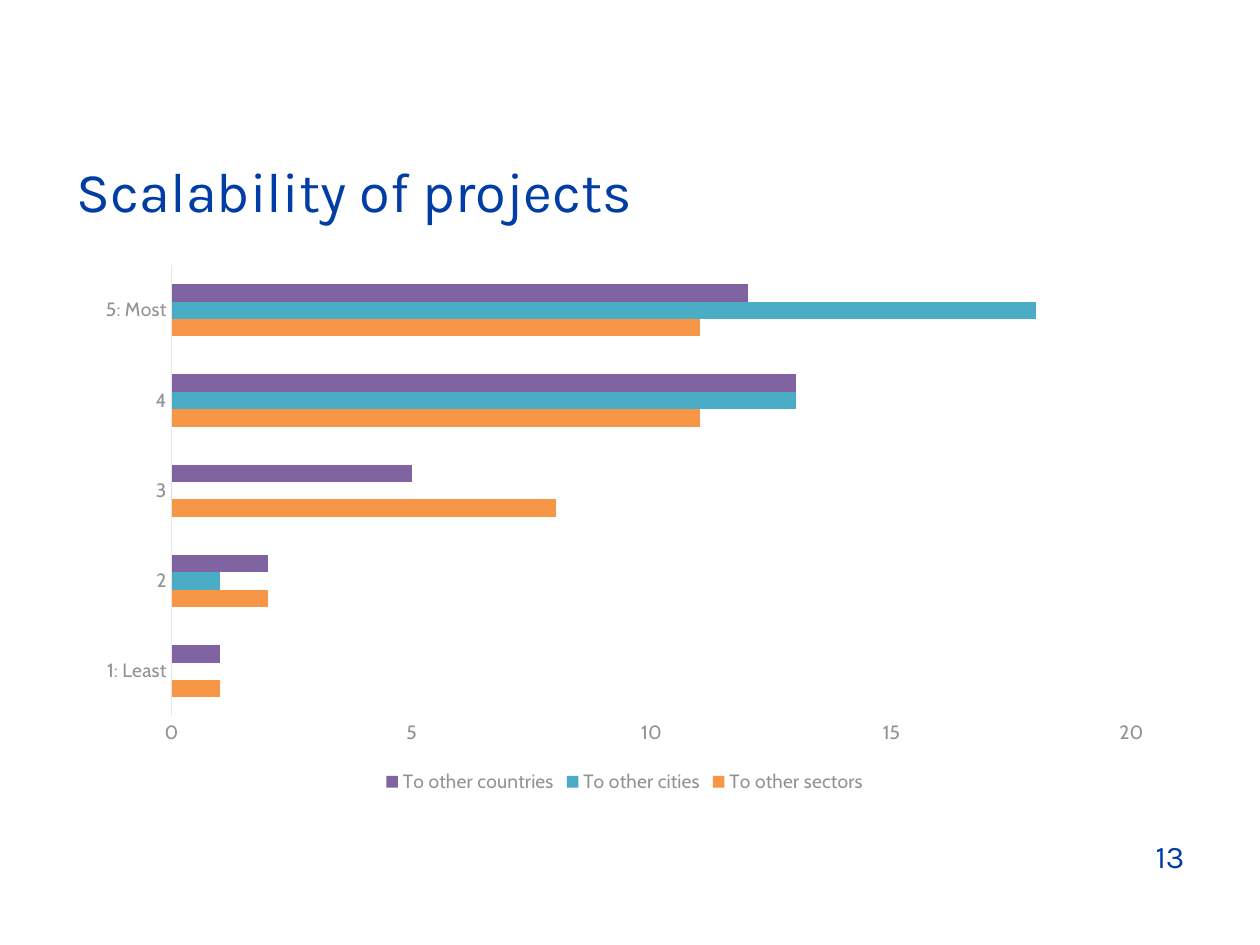
from pptx import Presentation
from pptx.chart.data import CategoryChartData
from pptx.dml.color import RGBColor
from pptx.enum.chart import XL_CHART_TYPE, XL_LEGEND_POSITION, XL_TICK_MARK
from pptx.enum.text import MSO_ANCHOR, PP_ALIGN
from pptx.util import Pt

BARS = XL_CHART_TYPE.BAR_CLUSTERED
BOTTOM = XL_LEGEND_POSITION.BOTTOM
NO_TICK = XL_TICK_MARK.NONE
MIDDLE = MSO_ANCHOR.MIDDLE
LEFT, RIGHT = PP_ALIGN.LEFT, PP_ALIGN.RIGHT

BLUE = RGBColor(0x00, 0x3D, 0xA5)
DARK = RGBColor(0x58, 0x58, 0x5A)
GRAY = RGBColor(0x92, 0x92, 0x94)
PALE = RGBColor(0xE6, 0xE6, 0xE6)
ORANGE = RGBColor(0xF7, 0x96, 0x46)
TEAL = RGBColor(0x4B, 0xAC, 0xC6)
PURPLE = RGBColor(0x80, 0x64, 0xA2)

LEVELS = ["1: Least", "2", "3", "4", "5: Most"]
SERIES = [
    ("To other sectors", (1, 2, 8, 11, 11), ORANGE),
    ("To other cities", (None, 1, 0, 13, 18), TEAL),
    ("To other countries", (1, 2, 5, 13, 12), PURPLE),
]


def put(item, values):
    """Set each named attribute of item."""
    for name, value in values.items():
        setattr(item, name, value)


class Page:
    head = {"name": "Karla", "size": Pt(32), "bold": False}
    foot = {"name": "Karla", "size": Pt(18)}
    label = {"name": "Cabin", "size": Pt(11), "bold": False}

    def __init__(self, deck):
        self.slide = deck.slides.add_slide(deck.slide_layouts[5])

    def style(self, font, look, color):
        put(font, look)
        font.color.rgb = color

    def title(self, text, left, top, width, height):
        shape = self.slide.shapes.title
        put(shape, {"left": Pt(left), "top": Pt(top),
                    "width": Pt(width), "height": Pt(height)})
        frame = shape.text_frame
        frame.text = text
        put(frame, {"vertical_anchor": MIDDLE, "word_wrap": True})
        para = frame.paragraphs[0]
        put(para, {"alignment": LEFT, "line_spacing": Pt(55)})
        self.style(para.runs[0].font, self.head, BLUE)

    def number(self, text, *box):
        frame = self.slide.shapes.add_textbox(*map(Pt, box)).text_frame
        frame.word_wrap = True
        para = frame.paragraphs[0]
        para.alignment = RIGHT
        run = para.add_run()
        run.text = text
        self.style(run.font, self.foot, BLUE)

    def chart(self, cats, series, *box):
        data = CategoryChartData()
        data.categories = cats
        for name, values, _ in series:
            data.add_series(name, values)
        chart = self.slide.shapes.add_chart(BARS, *map(Pt, box), data).chart
        self.style(chart.font, self.label, DARK)
        put(chart, {"has_title": False, "has_legend": True})
        put(chart.legend, {"position": BOTTOM, "include_in_layout": False})
        self.style(chart.legend.font, self.label, GRAY)

        plot = chart.plots[0]
        put(plot, {"gap_width": 219, "overlap": 0, "vary_by_categories": False})
        for bar, (_, _, color) in zip(plot.series, series):
            bar.format.fill.solid()
            bar.format.fill.fore_color.rgb = color

        for axis in (chart.category_axis, chart.value_axis):
            put(axis, {"major_tick_mark": NO_TICK, "minor_tick_mark": NO_TICK,
                       "has_major_gridlines": False})
            self.style(axis.tick_labels.font, self.label, GRAY)
        line = chart.category_axis.format.line
        line.color.rgb = PALE
        line.width = Pt(0.75)
        put(chart.value_axis, {"minimum_scale": 0, "maximum_scale": 20,
                               "major_unit": 5})
        chart.value_axis.format.line.fill.background()


def main():
    deck = Presentation()
    put(deck, {"slide_width": Pt(720), "slide_height": Pt(540)})
    page = Page(deck)
    page.title("Scalability of projects", 36.7, 55.4, 646.6, 90)
    page.number("13", 516, 474.5, 168, 28.8)
    page.chart(LEVELS, SERIES, 48.2, 145.4, 617.8, 311)
    deck.save("out.pptx")


if __name__ == "__main__":
    main()
